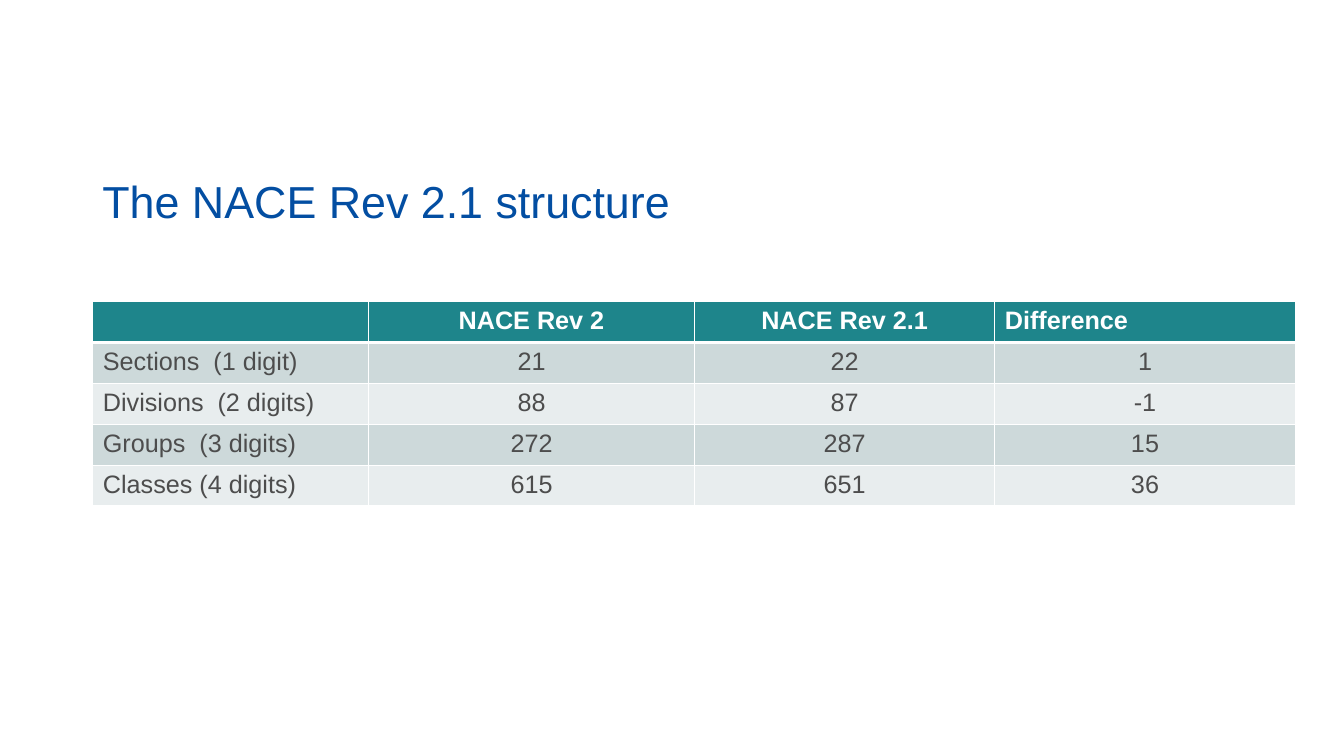
from lxml import etree
from pptx import Presentation
from pptx.dml.color import RGBColor
from pptx.enum.text import MSO_ANCHOR, PP_ALIGN
from pptx.oxml.ns import qn
from pptx.util import Cm, Pt

LEFT, CENTER = PP_ALIGN.LEFT, PP_ALIGN.CENTER
TOP, BOTTOM = MSO_ANCHOR.TOP, MSO_ANCHOR.BOTTOM
TITLE_ONLY = 5

HEADER = ["", "NACE Rev 2", "NACE Rev 2.1", "Difference"]
LEVELS = [
    ["Sections  (1 digit)", "21", "22", "1"],
    ["Divisions  (2 digits)", "88", "87", "-1"],
    ["Groups  (3 digits)", "272", "287", "15"],
    ["Classes (4 digits)", "615", "651", "36"],
]


def color(hex_value):
    return RGBColor.from_string(hex_value)


def write(frame, text, size=18, ink="4D4D4D", bold=False, align=LEFT, spacing=None):
    paragraph = frame.paragraphs[0]
    paragraph.alignment = align
    paragraph.line_spacing = spacing
    if not text:
        return
    run = paragraph.add_run()
    run.text = text
    run.font.name = SlideBuilder.FONT
    run.font.size = Pt(size)
    run.font.bold = bold
    run.font.color.rgb = color(ink)


class SlideBuilder:
    FONT = "Arial"
    BLUE, TEAL, WHITE = "034EA2", "1E858B", "FFFFFF"
    BANDS = ["CDD9DA", "E8EDEE"]

    def __init__(self, presentation):
        self.slide = presentation.slides.add_slide(presentation.slide_layouts[TITLE_ONLY])

    def title(self, text, left, top, width, height):
        shape = self.slide.shapes.title
        shape.left, shape.top, shape.width, shape.height = map(Cm, (left, top, width, height))
        frame = shape.text_frame
        frame.word_wrap = True
        frame.vertical_anchor = BOTTOM
        frame.margin_left = frame.margin_right = Cm(0.25)
        frame.margin_top, frame.margin_bottom = Cm(0.13), Cm(0)
        write(frame, text, size=32, ink=self.BLUE, spacing=0.9)

    def borders(self, cell, top=1, bottom=1):
        properties = cell._tc.get_or_add_tcPr()
        widths = {"a:lnL": 1, "a:lnR": 1, "a:lnT": top, "a:lnB": bottom}
        for position, (tag, width) in enumerate(widths.items()):
            line = etree.Element(qn(tag), w=str(Pt(width)))
            fill = etree.SubElement(line, qn("a:solidFill"))
            etree.SubElement(fill, qn("a:srgbClr"), val=self.WHITE)
            properties.insert(position, line)

    def cell(self, cell, text, fill, top=1, bottom=1, **text_format):
        cell.fill.solid()
        cell.fill.fore_color.rgb = color(fill)
        cell.vertical_anchor = TOP
        self.borders(cell, top, bottom)
        write(cell.text_frame, text, **text_format)

    def table(self, header, rows, left, top, widths, row_height):
        count = len(rows) + 1
        table = self.slide.shapes.add_table(
            count, len(header), Cm(left), Cm(top),
            Cm(sum(widths)), Cm(row_height * count)).table
        for column, width in zip(table.columns, widths):
            column.width = Cm(width)
        for row in table.rows:
            row.height = Cm(row_height)

        # Header row: the last heading stays left-aligned
        last = len(header) - 1
        for index, text in enumerate(header):
            self.cell(table.cell(0, index), text, self.TEAL, bottom=3, ink=self.WHITE,
                      bold=True, align=LEFT if index == last else CENTER)

        # Banded rows: label on the left, centred figures
        for number, values in enumerate(rows):
            for index, text in enumerate(values):
                self.cell(table.cell(number + 1, index), text, self.BANDS[number % 2],
                          top=3 if number == 0 else 1, align=CENTER if index else LEFT)


def main():
    presentation = Presentation()
    presentation.slide_width, presentation.slide_height = Cm(33.87), Cm(19.05)
    builder = SlideBuilder(presentation)
    builder.title("The NACE Rev 2.1 structure", 2.33, 3.56, 29.21, 2.18)
    builder.table(HEADER, LEVELS, 2.34, 7.6, [6.95, 8.21, 7.57, 7.57], 1.03)
    presentation.save("out.pptx")


if __name__ == "__main__":
    main()
